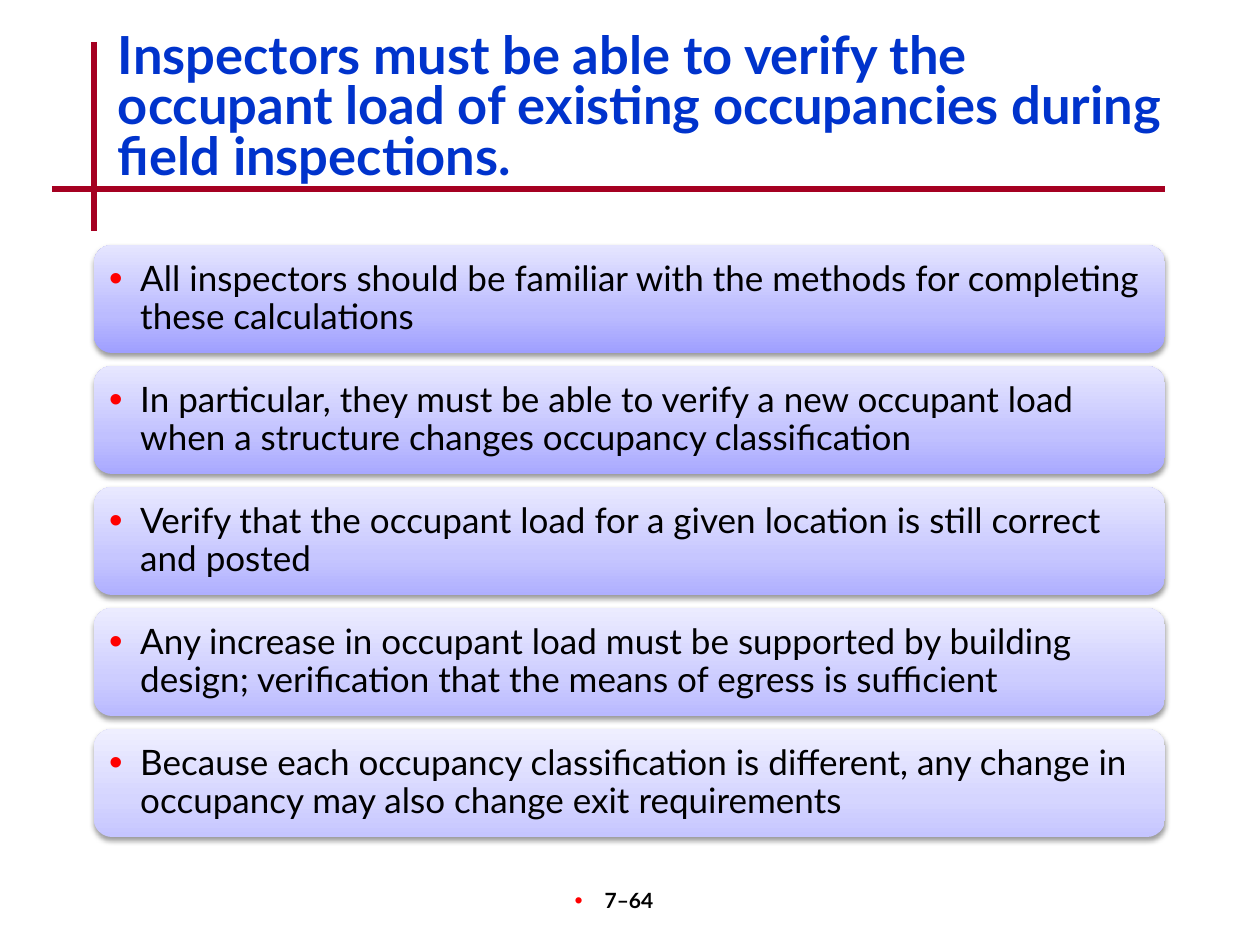
from lxml import etree
from pptx import Presentation
from pptx.dml.color import RGBColor
from pptx.enum.shapes import MSO_CONNECTOR, MSO_SHAPE
from pptx.enum.text import MSO_ANCHOR, PP_ALIGN
from pptx.oxml import parse_xml
from pptx.oxml.ns import nsdecls, qn
from pptx.util import Emu, Pt

STRAIGHT = MSO_CONNECTOR.STRAIGHT
ROUNDED = MSO_SHAPE.ROUNDED_RECTANGLE
TOP, MIDDLE = MSO_ANCHOR.TOP, MSO_ANCHOR.MIDDLE
LEFT, CENTER = PP_ALIGN.LEFT, PP_ALIGN.CENTER

PX_PER_INCH = 126
FONT = "Lato"
COLORS = {
    "title": "0033CC",
    "rule": "A50021",
    "text": "000000",
    "bullet": "FF0000",
    "shadow": "000000",
}

CARD_LEFT, CARD_TOP, CARD_WIDTH, CARD_HEIGHT = 94, 245, 1071, 108
CARD_PITCH = 121
STOPS = (0, 35, 100)
CARDS = [
    ("All inspectors should be familiar with the methods for completing these calculations",
     ("9F9FFF", "BBBBFF", "E5E5FF")),
    ("In particular, they must be able to verify a new occupant load when a structure "
     "changes occupancy classification",
     ("A8A8FF", "C1C1FF", "E7E7FF")),
    ("Verify that the occupant load for a given location is still correct and posted",
     ("AFAFFF", "C6C6FF", "E9E9FF")),
    ("Any increase in occupant load must be supported by building design; verification "
     "that the means of egress is sufficient",
     ("B9B9FF", "CDCDFF", "ECECFF")),
    ("Because each occupancy classification is different, any change in occupancy may "
     "also change exit requirements",
     ("C5C5FF", "D5D5FF", "EFEFFF")),
]


def px(length):
    return Emu(round(length * 914400 / PX_PER_INCH))


def add_bullet(para, margin, hanging):
    properties = para._p.get_or_add_pPr()
    properties.set("marL", str(px(margin)))
    properties.set("indent", str(-px(hanging)))
    color = etree.SubElement(properties, qn("a:buClr"))
    etree.SubElement(color, qn("a:srgbClr"), val=COLORS["bullet"])
    etree.SubElement(properties, qn("a:buSzPct"), val="110000")
    etree.SubElement(properties, qn("a:buFont"), typeface="Arial")
    etree.SubElement(properties, qn("a:buChar"), char="•")


def write_text(shape, text, *, size, color="text", bold=False, align=LEFT, anchor=TOP,
               spacing=1.0, insets=(13, 6), bullet=None):
    """Fill a shape with one paragraph; bullet is (margin, hanging) in px."""
    frame = shape.text_frame
    frame.word_wrap = True
    frame.vertical_anchor = anchor
    frame.margin_left = frame.margin_right = px(insets[0])
    frame.margin_top = frame.margin_bottom = px(insets[1])
    para = frame.paragraphs[0]
    if bullet:
        add_bullet(para, *bullet)
    para.alignment = align
    para.line_spacing = spacing
    span = para.add_run()
    span.text = text
    span.font.name = FONT
    span.font.size = Pt(size)
    span.font.bold = bold
    span.font.color.rgb = RGBColor.from_string(COLORS[color])


def add_text(page, left, top, width, height, text, **text_format):
    box = page.shapes.add_textbox(px(left), px(top), px(width), px(height))
    write_text(box, text, **text_format)


def add_rule(page, x1, y1, x2, y2):
    rule = page.shapes.add_connector(STRAIGHT, px(x1), px(y1), px(x2), px(y2))
    rule.line.color.rgb = RGBColor.from_string(COLORS["rule"])
    rule.line.width = Pt(3)
    etree.SubElement(rule._element.spPr, qn("a:effectLst"))


def set_gradient(shape, colors):
    """Run the colours from the bottom edge to the top edge."""
    stops = "".join(
        f'<a:gs pos="{stop * 1000}"><a:srgbClr val="{color}"/></a:gs>'
        for stop, color in zip(STOPS, colors))
    gradient = parse_xml(
        f'<a:gradFill {nsdecls("a")} rotWithShape="1"><a:gsLst>{stops}</a:gsLst>'
        '<a:lin ang="16200000" scaled="0"/></a:gradFill>')
    shape._element.spPr.find(qn("a:prstGeom")).addnext(gradient)


def set_soft_shadow(shape):
    shape._element.spPr.append(parse_xml(
        f'<a:effectLst {nsdecls("a")}>'
        f'<a:outerShdw blurRad="{Pt(3.1)}" dist="{Pt(1.6)}" dir="5400000" rotWithShape="0">'
        f'<a:srgbClr val="{COLORS["shadow"]}"><a:alpha val="38000"/></a:srgbClr>'
        '</a:outerShdw></a:effectLst>'))


def add_card(page, top, text, colors):
    card = page.shapes.add_shape(ROUNDED, px(CARD_LEFT), px(top), px(CARD_WIDTH), px(CARD_HEIGHT))
    set_gradient(card, colors)
    card.line.fill.background()
    set_soft_shadow(card)
    write_text(card, text, size=20, anchor=MIDDLE, spacing=0.9, insets=(10, 10),
               bullet=(31, 31))


def main():
    deck = Presentation()
    deck.slide_width, deck.slide_height = px(1260), px(945)
    page = deck.slides.add_slide(deck.slide_layouts[6])

    add_rule(page, 94, 42, 94, 231)
    add_rule(page, 52, 189, 1165, 189)
    add_text(page, 105, 28, 1071, 126,
             "Inspectors must be able to verify the occupant load of existing occupancies "
             "during field inspections.",
             size=30, color="title", bold=True, spacing=0.8)
    for index, (text, colors) in enumerate(CARDS):
        add_card(page, CARD_TOP + index * CARD_PITCH, text, colors)
    add_text(page, 494, 882, 262, 63, "7–64", size=12, bold=True, align=CENTER,
             bullet=(6, 30))

    deck.save("out.pptx")


if __name__ == "__main__":
    main()
